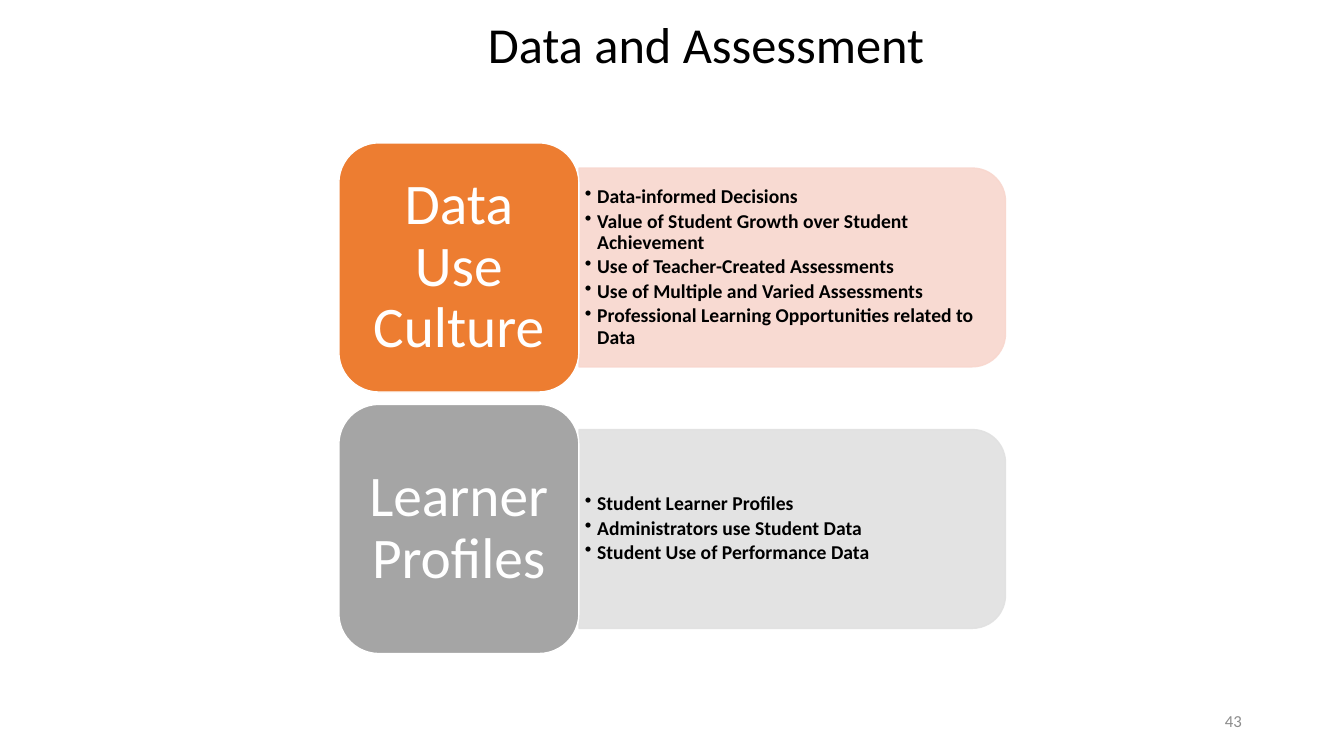
from dataclasses import dataclass

from lxml import etree
from pptx import Presentation
from pptx.dml.color import RGBColor
from pptx.enum.shapes import MSO_SHAPE
from pptx.enum.text import MSO_ANCHOR, PP_ALIGN
from pptx.oxml.ns import qn
from pptx.util import Cm, Pt

LEFT, CENTER, RIGHT = PP_ALIGN.LEFT, PP_ALIGN.CENTER, PP_ALIGN.RIGHT
TOP, MIDDLE = MSO_ANCHOR.TOP, MSO_ANCHOR.MIDDLE
ROUNDED, TWO_ROUNDED = MSO_SHAPE.ROUNDED_RECTANGLE, MSO_SHAPE.ROUND_2_SAME_RECTANGLE

# Sizes in centimetres
LABEL_LEFT, LABEL_TOP = 8.54, 3.6
LABEL_WIDTH, LABEL_HEIGHT = 6.05, 6.28
TOPIC_STEP = 6.59
PANEL_LENGTH, PANEL_THICKNESS = 10.75, 5.01
POINTS_WIDTH, POINTS_HEIGHT = 10.49, 4.52
BULLET_INDENT = 0.31


@dataclass
class Topic:
    label: str
    points: list[str]
    label_color: str
    panel_color: str


TOPICS = [
    Topic("Data Use Culture",
          ["Data-informed Decisions",
           "Value of Student Growth over Student Achievement",
           "Use of Teacher-Created Assessments",
           "Use of Multiple and Varied Assessments",
           "Professional Learning Opportunities related to Data"],
          "ED7D31", "F8D7CE"),
    Topic("Learner Profiles",
          ["Student Learner Profiles",
           "Administrators use Student Data",
           "Student Use of Performance Data"],
          "A5A5A5", "E1E1E1"),
]


def paint(color_format, color: str, opacity: int = 100) -> None:
    """Set a solid fill, with opacity in percent."""
    color_format.solid()
    color_format.fore_color.rgb = RGBColor.from_string(color)
    if opacity < 100:
        rgb = color_format._xPr.find(".//" + qn("a:srgbClr"))
        etree.SubElement(rgb, qn("a:alpha"), val=str(opacity * 1000))


def add_block(slide, kind, left: float, top: float, width: float, height: float,
              fill: str, line: str, opacity: int = 100):
    block = slide.shapes.add_shape(kind, Cm(left), Cm(top), Cm(width), Cm(height))
    block.shadow.inherit = False
    paint(block.fill, fill, opacity)
    paint(block.line.fill, line, opacity)
    block.line.width = Pt(1)
    return block


def add_box(slide, left: float, top: float, width: float, height: float):
    return slide.shapes.add_textbox(Cm(left), Cm(top), Cm(width), Cm(height))


def write(shape, lines: list[str], *, size: float, color: str = "000000",
          bold: bool = False, align=LEFT, anchor=MIDDLE, spacing: float = 1.0,
          after: float = 0, margins: tuple[float, float] = (0.25, 0.13),
          bullet: bool = False) -> None:
    frame = shape.text_frame
    frame.word_wrap = True
    frame.vertical_anchor = anchor
    frame.margin_left = frame.margin_right = Cm(margins[0])
    frame.margin_top = frame.margin_bottom = Cm(margins[1])
    for index, line in enumerate(lines):
        paragraph = frame.add_paragraph() if index else frame.paragraphs[0]
        if bullet:
            properties = paragraph._p.get_or_add_pPr()
            properties.set("marL", str(Cm(BULLET_INDENT)))
            properties.set("indent", str(-Cm(BULLET_INDENT)))
            etree.SubElement(properties, qn("a:buChar"), char="•")
        paragraph.alignment = align
        paragraph.line_spacing = spacing
        paragraph.space_after = Pt(after)
        run = paragraph.add_run()
        run.text = line
        run.font.name = "Calibri"
        run.font.size = Pt(size)
        run.font.bold = bold
        run.font.color.rgb = RGBColor.from_string(color)


def add_topic(slide, topic: Topic, top: float) -> None:
    middle = top + LABEL_HEIGHT / 2
    panel_left = LABEL_LEFT + LABEL_WIDTH

    # Panel: an upright shape turned a quarter about its centre
    panel = add_block(slide, TWO_ROUNDED,
                      panel_left + (PANEL_LENGTH - PANEL_THICKNESS) / 2,
                      middle - PANEL_LENGTH / 2, PANEL_THICKNESS, PANEL_LENGTH,
                      topic.panel_color, topic.panel_color, opacity=90)
    panel.rotation = 90

    # Bulleted points, upright on the panel
    points = add_box(slide, panel_left, middle - POINTS_HEIGHT / 2,
                     POINTS_WIDTH, POINTS_HEIGHT)
    write(points, topic.points, size=14, bold=True, spacing=0.9, after=2.4,
          margins=(0.15, 0.08), bullet=True)

    # Label
    label = add_block(slide, ROUNDED, LABEL_LEFT, top, LABEL_WIDTH, LABEL_HEIGHT,
                      topic.label_color, "FFFFFF")
    write(label, [topic.label], size=41, color="FFFFFF", align=CENTER,
          spacing=0.9, margins=(0.43, 0.23))


def main() -> None:
    deck = Presentation()
    deck.slide_width, deck.slide_height = Cm(33.87), Cm(19.05)
    slide = deck.slides.add_slide(deck.slide_layouts[6])

    # Topics
    for row, topic in enumerate(TOPICS):
        add_topic(slide, topic, LABEL_TOP + row * TOPIC_STEP)

    # Title and slide number
    title = add_box(slide, 5.64, 0.2, 24.31, 1.8)
    write(title, ["Data and Assessment"], size=36, align=CENTER, anchor=TOP)
    number = add_box(slide, 23.93, 17.65, 7.62, 1.02)
    write(number, ["43"], size=12, color="8C8C8C", align=RIGHT)

    deck.save("out.pptx")


if __name__ == "__main__":
    main()
